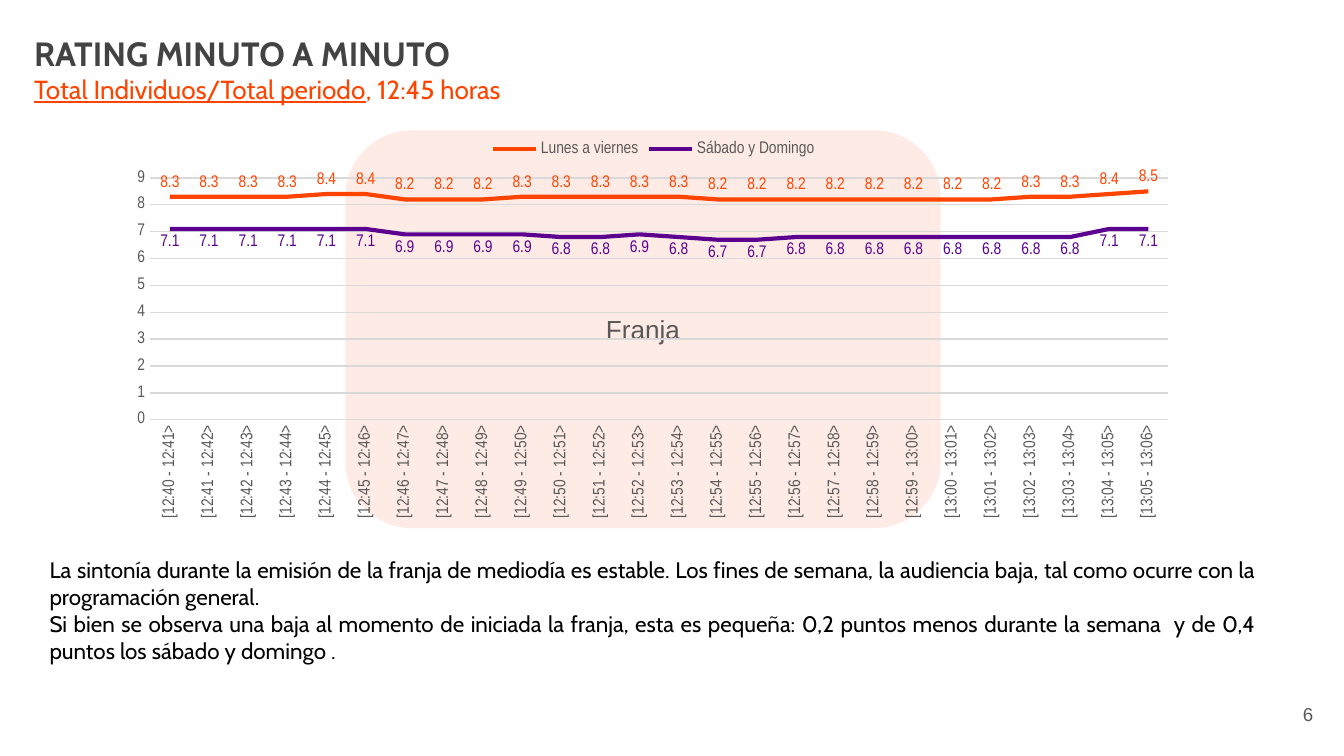
"""Build the minute-by-minute rating slide."""
import pptx
import pptx.chart.data
import pptx.dml.color
import pptx.enum.chart
import pptx.enum.shapes
import pptx.enum.text
import pptx.oxml
import pptx.oxml.ns
import pptx.util

RGB = pptx.dml.color.RGBColor
ORANGE = RGB(0xFF, 0x44, 0x00)
PURPLE = RGB(0x5B, 0x00, 0x8F)
TITLE = RGB(0x43, 0x43, 0x43)
GREY = RGB(0x59, 0x59, 0x59)
GRID = RGB(0xD9, 0xD9, 0xD9)
BLACK = RGB(0, 0, 0)

COLS, ROWS = 100, 56.25
CELL = pptx.util.Inches(0.1)
ALIGN = pptx.enum.text.PP_ALIGN
MIDDLE = pptx.enum.text.MSO_ANCHOR.MIDDLE
PLACE = pptx.enum.chart.XL_LABEL_POSITION

WEEK = [8.3] * 4 + [8.4] * 2 + [8.2] * 3 + [8.3] * 5 + [8.2] * 8 + [8.3] * 2 + [8.4, 8.5]
ENDS = ([7.1] * 6 + [6.9] * 4 + [6.8] * 2 + [6.9, 6.8] + [6.7] * 2
        + [6.8] * 8 + [7.1] * 2)
SERIES = [
    ("Lunes a viernes", WEEK, ORANGE, PLACE.ABOVE),
    ("Sábado y Domingo", ENDS, PURPLE, PLACE.BELOW),
]
NOTES = [
    "La sintonía durante la emisión de la franja de mediodía es estable. "
    "Los fines de semana, la audiencia baja, tal como ocurre con la programación general.",
    "Si bien se observa una baja al momento de iniciada la franja, esta es pequeña: "
    "0,2 puntos menos durante la semana  y de 0,4 puntos los sábado y domingo . ",
]


def area(*cells):
    """Turn grid cells into lengths."""
    return [int(n * CELL) for n in cells]


def style(font, size, color, name="Arial Narrow", bold=False):
    """Set the look of a font."""
    font.size = pptx.util.Pt(size)
    font.color.rgb = color
    font.name = name
    font.bold = bold


def write(frame, lines, size, color, name, align, bold=False):
    """Fill a text frame with paragraphs of one style."""
    frame.word_wrap = True
    frame.text = "\n".join(lines)
    for para in frame.paragraphs:
        para.alignment = align
        for run in para.runs:
            style(run.font, size, color, name, bold)


def add_text(slide, cells, *look, inset=None):
    """Add a text box on the grid."""
    frame = slide.shapes.add_textbox(*area(*cells)).text_frame
    write(frame, *look)
    if inset:
        edge = int(inset * CELL)
        frame.margin_left = frame.margin_right = edge
        frame.margin_top = frame.margin_bottom = edge
    return frame


def add_head(slide):
    """Add the title and its two-part subtitle."""
    frame = add_text(slide, (1.55, 1.45, 88.7, 6.2), ["RATING MINUTO A MINUTO"],
                     18, TITLE, "Cabin", ALIGN.LEFT, True, inset=1)
    para = frame.add_paragraph()
    for text, under in (("Total Individuos/Total periodo", True), (", 12:45 horas", False)):
        run = para.add_run()
        run.text = text
        style(run.font, 14, ORANGE, "Cabin")
        run.font.underline = under


def add_band(slide):
    """Add the pale rounded band for the time slot."""
    kind = pptx.enum.shapes.MSO_SHAPE.ROUNDED_RECTANGLE
    band = slide.shapes.add_shape(kind, *area(25.7, 9.7, 44.3, 29.6))
    band.shadow.inherit = False
    band.fill.solid()
    band.fill.fore_color.rgb = ORANGE
    band.line.fill.background()
    tint = band.fill._xPr.find(".//" + pptx.oxml.ns.qn("a:srgbClr"))
    tint.append(pptx.oxml.parse_xml(
        f'<a:alpha {pptx.oxml.ns.nsdecls("a")} val="10000"/>'))
    write(band.text_frame, ["Franja"], 14, GREY, "Arial", ALIGN.CENTER)
    band.text_frame.vertical_anchor = MIDDLE


def clock(minute):
    """Show a minute of the day as hours and minutes."""
    return f"{minute // 60}:{minute % 60:02}"


def set_line(line, color, width):
    """Set the colour and width of a line."""
    line.color.rgb = color
    line.width = pptx.util.Pt(width)


def set_axes(chart):
    """Style both axes and the gridlines."""
    cats, vals = chart.category_axis, chart.value_axis
    for axis in (cats, vals):
        axis.major_tick_mark = axis.minor_tick_mark = pptx.enum.chart.XL_TICK_MARK.NONE
        style(axis.tick_labels.font, 9, GREY)
    set_line(cats.format.line, GRID, 0.75)
    cats._element.find(".//" + pptx.oxml.ns.qn("a:bodyPr")).set("rot", "-5400000")
    vals.minimum_scale, vals.maximum_scale, vals.major_unit = 0, 9, 1
    vals.tick_labels.number_format = "0"
    vals.tick_labels.number_format_is_linked = False
    vals.format.line.fill.background()
    set_line(vals.major_gridlines.format.line, GRID, 0.75)


def set_plot(chart, x, y, w, h):
    """Fix the inner plot area as shares of the chart."""
    plot = chart._chartSpace.chart.plotArea
    for old in plot.findall(pptx.oxml.ns.qn("c:layout")):
        plot.remove(old)
    sizes = "".join(f'<c:{k} val="{v}"/>' for k, v in zip("xywh", (x, y, w, h)))
    plot.insert(0, pptx.oxml.parse_xml(
        f'<c:layout {pptx.oxml.ns.nsdecls("c")}><c:manualLayout>'
        '<c:layoutTarget val="inner"/><c:xMode val="edge"/><c:yMode val="edge"/>'
        f'{sizes}</c:manualLayout></c:layout>'))


def add_lines(slide):
    """Add the line chart of both ratings."""
    data = pptx.chart.data.CategoryChartData(number_format="0.0")
    start = 12 * 60 + 40
    data.categories = [f"[{clock(m)} - {clock(m + 1)}>"
                       for m in range(start, start + len(WEEK))]
    for name, vals, _, _ in SERIES:
        data.add_series(name, vals)
    kind = pptx.enum.chart.XL_CHART_TYPE.LINE
    chart = slide.shapes.add_chart(kind, *area(8.8, 9.35, 79.7, 30), data).chart
    style(chart.font, 10, BLACK)
    chart.has_title = False
    chart.has_legend = True
    chart.legend.position = pptx.enum.chart.XL_LEGEND_POSITION.TOP
    chart.legend.include_in_layout = False
    style(chart.legend.font, 9, GREY)
    chart.plots[0].vary_by_categories = False
    set_axes(chart)
    set_plot(chart, 0.03, 0.13, 0.95, 0.6)
    for line, (_, _, color, place) in zip(chart.plots[0].series, SERIES):
        line.smooth = False
        line.marker.style = pptx.enum.chart.XL_MARKER_STYLE.NONE
        set_line(line.format.line, color, 2.25)
        labels = line.data_labels
        labels.show_value = True
        labels.position = place
        style(labels.font, 9, color)


def main():
    """Build and save the slide."""
    deck = pptx.Presentation()
    deck.slide_width, deck.slide_height = area(COLS, ROWS)
    slide = deck.slides.add_slide(deck.slide_layouts[6])
    page = add_text(slide, (92.7, 51, 6, 4.3), ["6"], 10, GREY, "Arial",
                    ALIGN.RIGHT, inset=1)
    page.vertical_anchor = MIDDLE
    add_head(slide)
    body = add_text(slide, (2.7, 40.9, 91.8, 9.1), NOTES, 12, BLACK, "Cabin", ALIGN.JUSTIFY)
    body.auto_size = pptx.enum.text.MSO_AUTO_SIZE.SHAPE_TO_FIT_TEXT
    add_band(slide)
    add_lines(slide)
    deck.save("out.pptx")


if __name__ == "__main__":
    main()
